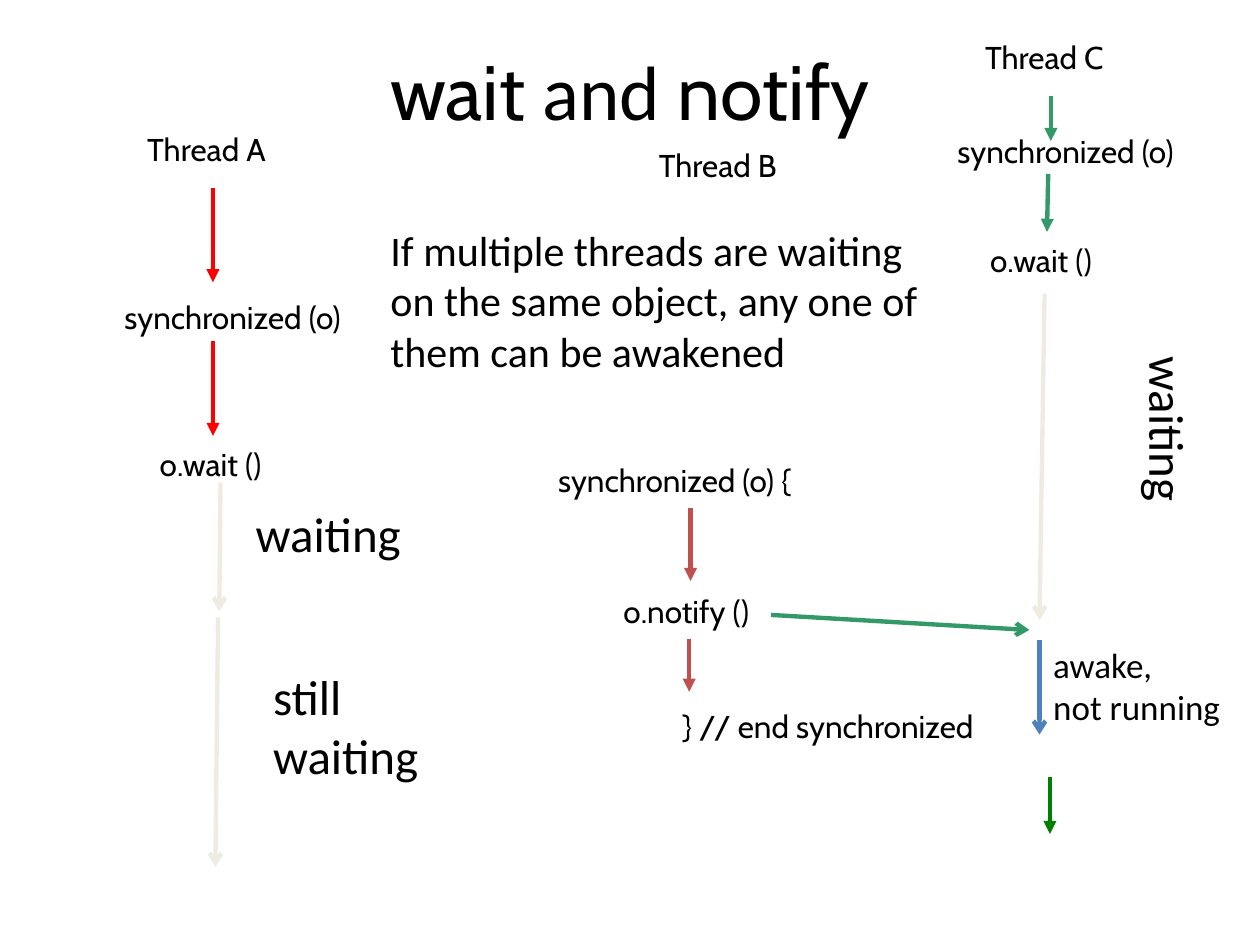
from lxml.etree import SubElement
from pptx import Presentation
from pptx.dml.color import RGBColor
from pptx.enum.shapes import MSO_CONNECTOR
from pptx.enum.text import MSO_ANCHOR as Anchor, MSO_AUTO_SIZE as AutoSize, PP_ALIGN as Align
from pptx.oxml.ns import qn
from pptx.util import Pt

BLACK = RGBColor(0x00, 0x00, 0x00)
RED = RGBColor(0xFF, 0x00, 0x00)
BRICK = RGBColor(0xC0, 0x50, 0x4D)
GREEN = RGBColor(0x00, 0x80, 0x00)
SEA_GREEN = RGBColor(0x33, 0x99, 0x66)
BEIGE = RGBColor(0xEE, 0xEC, 0xE1)
BLUE = RGBColor(0x4F, 0x81, 0xBD)
CODE_FONT, BODY_FONT = "Cabin", "Calibri"


def add_run(paragraph, text, font=BODY_FONT, size=18, color=BLACK):
    run = paragraph.add_run()
    run.text = text
    run.font.name = font
    run.font.size = Pt(size)
    run.font.color.rgb = color


class ThreadDiagram:
    line_width = 2.5
    title_size = 44
    step_size = 18

    def __init__(self, slide):
        self.slide = slide

    def add_box(self, left, top, width, height, wrap=True):
        box = self.slide.shapes.add_textbox(Pt(left), Pt(top), Pt(width), Pt(height))
        box.text_frame.word_wrap = wrap
        return box

    def title(self, runs):
        frame = self.add_box(36, 6, 648, 90).text_frame
        frame.vertical_anchor = Anchor.MIDDLE
        frame.paragraphs[0].alignment = Align.CENTER
        for text, font in runs:
            add_run(frame.paragraphs[0], text, font=font, size=self.title_size)

    def text(self, lines, left, top, width, height, wrap=True, rotation=0, **style):
        """Add a text box with one paragraph for each line."""
        box = self.add_box(left, top, width, height, wrap)
        box.rotation = rotation
        frame = box.text_frame
        frame.auto_size = AutoSize.SHAPE_TO_FIT_TEXT
        for index, line in enumerate(lines.split("\n")):
            paragraph = frame.add_paragraph() if index else frame.paragraphs[0]
            add_run(paragraph, line, **style)

    def step(self, label, left, top, width):
        """Add a one-line thread name or statement."""
        self.text(label, left, top, width, 29, wrap=False, font=CODE_FONT, size=self.step_size)

    def arrow(self, start, end, color, head="triangle"):
        points = [Pt(value) for value in (*start, *end)]
        connector = self.slide.shapes.add_connector(MSO_CONNECTOR.STRAIGHT, *points)
        connector.line.width = Pt(self.line_width)
        connector.line.color.rgb = color
        SubElement(connector.line._get_or_add_ln(), qn("a:tailEnd"), type=head)
        SubElement(connector._element.spPr, qn("a:effectLst"))


def main():
    presentation = Presentation()
    presentation.slide_width, presentation.slide_height = Pt(720), Pt(540)
    slide = presentation.slides.add_slide(presentation.slide_layouts[6])
    diagram = ThreadDiagram(slide)

    diagram.title([("wait", CODE_FONT), (" and ", BODY_FONT), ("notify", CODE_FONT)])

    steps = [
        ("Thread A", 77, 70.6, 87),
        ("synchronized (o)", 64, 167, 147),
        ("o.wait ()", 84.2, 250.6, 82),
        ("Thread B", 369.4, 80, 86.4),
        ("synchronized (o) {", 311.8, 260, 161.3),
        ("o.notify ()", 349.2, 334.8, 93.6),
        ("} // end synchronized", 383, 400.3, 186.5),
        ("Thread C", 555.8, 18, 87),
        ("synchronized (o)", 540, 72, 147),
        ("o.wait ()", 558.7, 134, 82),
    ]
    for step in steps:
        diagram.step(*step)

    running = [
        ((121.7, 107.3), (121.7, 161.3), RED),
        ((121.7, 195.1), (121.7, 249.1), RED),
        ((394.6, 290.2), (394.6, 332), BRICK),
        ((393.8, 365), (393.8, 395.3), BRICK),
        ((600.5, 54.7), (600.5, 80.6), SEA_GREEN),
        ((599, 99.4), (598.3, 132.5), SEA_GREEN),
        ((600, 444.2), (600, 476.6), GREEN),
    ]
    for start, end, color in running:
        diagram.arrow(start, end, color)

    waiting = [
        ((126, 275.8), (125.3, 349.2), BEIGE),
        ((124.6, 352.8), (123.1, 495.4), BEIGE),
        ((596.9, 167.8), (594, 354.2), BEIGE),
        ((594, 365.8), (594, 419.8), BLUE),
        ((440.6, 351.4), (588.2, 360), SEA_GREEN),
    ]
    for start, end, color in waiting:
        diagram.arrow(start, end, color, head="arrow")

    diagram.text(
        "If multiple threads are waiting on the same object, any one of them can be awakened",
        216, 124.6, 334.8, 94.3, size=24,
    )
    diagram.text("waiting", 139, 284.4, 116, 41, size=28)
    diagram.text("still waiting", 149, 377.3, 116, 74.2, size=28)
    diagram.text("waiting", 609.8, 234, 116, 41, rotation=90, size=28)
    diagram.text("awake,\nnot running", 594.7, 364.3, 131, 55.4, wrap=False, size=20)

    presentation.save("out.pptx")


if __name__ == "__main__":
    main()
